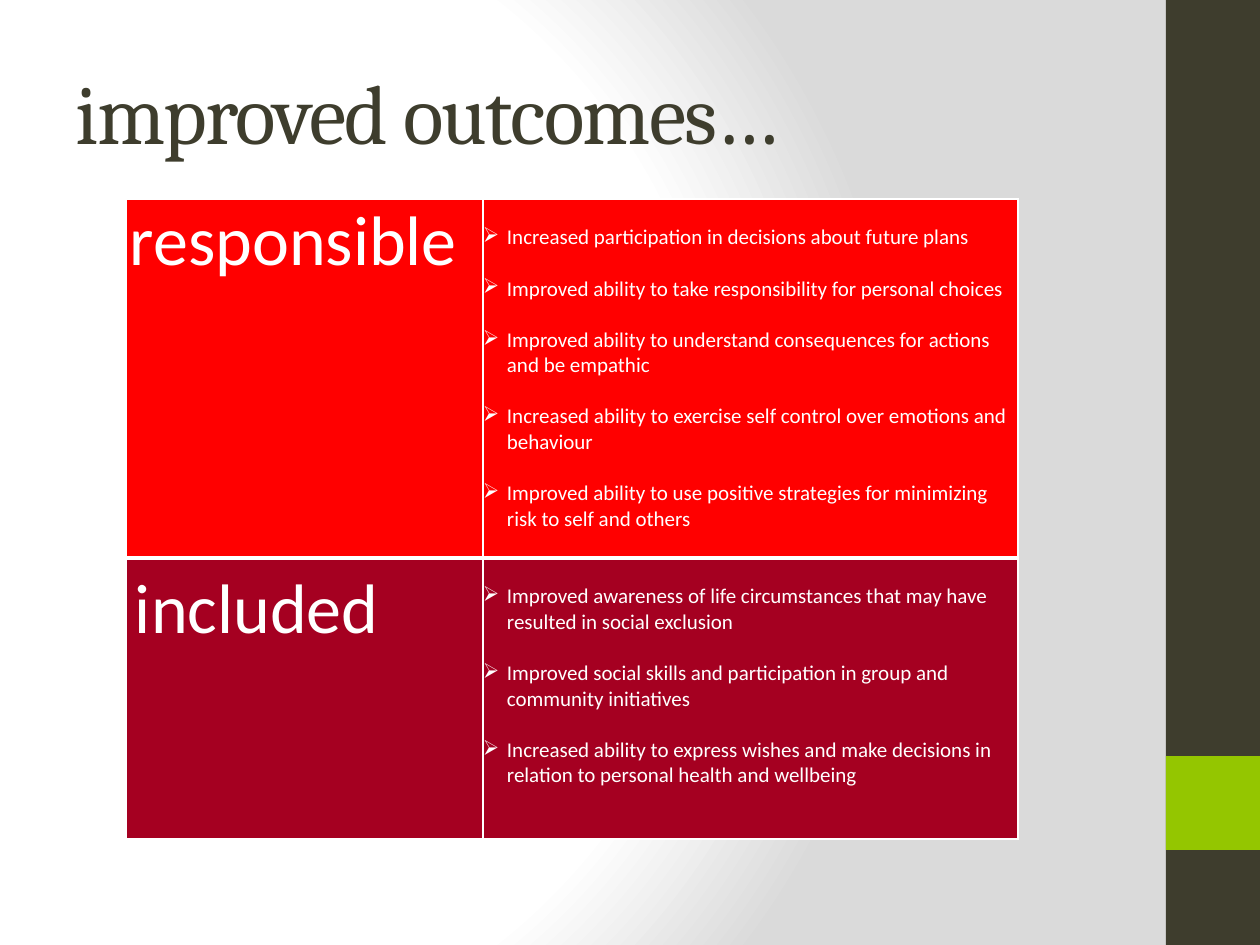
from lxml import etree
from pptx import Presentation
from pptx.dml.color import RGBColor
from pptx.enum.shapes import MSO_SHAPE
from pptx.enum.text import MSO_ANCHOR, PP_ALIGN
from pptx.oxml import parse_xml
from pptx.oxml.ns import nsdecls, qn
from pptx.util import Emu, Pt

RECTANGLE = MSO_SHAPE.RECTANGLE
MIDDLE = MSO_ANCHOR.MIDDLE
LEFT = PP_ALIGN.LEFT
PX_PER_INCH = 126

COLORS = {
    "white": "FFFFFF",
    "grey": "DADADA",
    "olive": "3E3D2D",
    "green": "94C600",
    "red": "FF0000",
    "crimson": "A50021",
}

OUTCOMES = [
    {
        "name": "responsible", "color": "red", "height": 359,
        "name_left": 4, "name_top": 0, "name_line": None,
        "points": [
            "Increased participation in decisions about future plans",
            "Improved ability to take responsibility for personal choices",
            "Improved ability to understand consequences for actions and be empathic",
            "Increased ability to exercise self control over emotions and behaviour",
            "Improved ability to use positive strategies for minimizing risk to self and others",
        ],
    },
    {
        "name": "included", "color": "crimson", "height": 281,
        "name_left": 9, "name_top": 63, "name_line": 18.1,
        "points": [
            "Improved awareness of life circumstances that may have resulted in social exclusion",
            "Improved social skills and participation in group and community initiatives",
            "Increased ability to express wishes and make decisions in relation to "
            "personal health and wellbeing",
        ],
    },
]


def px(length):
    return Emu(round(length * 914400 / PX_PER_INCH))


def rgb(name):
    return RGBColor.from_string(COLORS[name])


def paint_background(slide):
    """Circular gradient, white at the left and grey at the right."""
    slide.background.fill.solid()
    bg_pr = slide.background._cSld.bg.bgPr
    stops = "".join(
        f'<a:gs pos="{percent * 1000}"><a:srgbClr val="{COLORS[color]}"/></a:gs>'
        for percent, color in [(0, "white"), (75, "white"), (100, "grey")]
    )
    gradient = parse_xml(
        f'<a:gradFill {nsdecls("a")} rotWithShape="1"><a:gsLst>{stops}</a:gsLst>'
        '<a:path path="circle"><a:fillToRect l="20000" t="50000" r="100000" b="50000"/>'
        "</a:path></a:gradFill>"
    )
    bg_pr.replace(bg_pr.find(qn("a:solidFill")), gradient)


def add_sidebar(slide, left, top, width, height):
    accent_top = top + height * 4 // 5
    for band_top, band_height, color in [(top, height, "olive"), (accent_top, width, "green")]:
        band = slide.shapes.add_shape(
            RECTANGLE, px(left), px(band_top), px(width), px(band_height))
        band.shadow.inherit = False
        band.fill.solid()
        band.fill.fore_color.rgb = rgb(color)
        band.line.fill.background()


def place_title(slide, left, top, width, height):
    title = slide.shapes.title
    title.left, title.top, title.width, title.height = map(px, (left, top, width, height))
    frame = title.text_frame
    frame.text = "improved outcomes…"
    frame.vertical_anchor = MIDDLE
    paragraph = frame.paragraphs[0]
    paragraph.alignment = LEFT
    run = paragraph.runs[0]
    run.font.name = "Cambria"
    run.font.size = Pt(48)
    run.font.color.rgb = rgb("olive")
    run.font._element.set("spc", "-100")


def set_borders(cell, top_width, bottom_width):
    properties = cell._tc.get_or_add_tcPr()
    for side, width in [("L", 1), ("R", 1), ("T", top_width), ("B", bottom_width)]:
        line = etree.SubElement(properties, qn(f"a:ln{side}"), w=str(Pt(width)))
        fill = etree.SubElement(line, qn("a:solidFill"))
        etree.SubElement(fill, qn("a:srgbClr"), val=COLORS["white"])


def format_cell(cell, color, left, top):
    cell.margin_left, cell.margin_top = px(left), px(top)
    cell.margin_right = cell.margin_bottom = 0
    cell.fill.solid()
    cell.fill.fore_color.rgb = rgb(color)


def format_text(paragraph, size):
    for run in paragraph.runs:
        run.font.name = "Calibri"
        run.font.size = Pt(size)
        run.font.bold = False
        run.font.color.rgb = rgb("white")


def fill_name(cell, outcome):
    format_cell(cell, outcome["color"], outcome["name_left"], outcome["name_top"])
    cell.text_frame.text = outcome["name"]
    paragraph = cell.text_frame.paragraphs[0]
    if outcome["name_line"]:
        paragraph.line_spacing = Pt(outcome["name_line"])
    format_text(paragraph, 40)


def fill_points(cell, outcome):
    format_cell(cell, outcome["color"], 0, 26)
    frame = cell.text_frame
    frame.text = "\n".join(outcome["points"])
    for index, paragraph in enumerate(frame.paragraphs):
        properties = paragraph._p.get_or_add_pPr()
        properties.set("marL", str(px(24)))
        properties.set("indent", str(-px(24)))
        etree.SubElement(properties, qn("a:buChar"), char="➢")
        if index:
            paragraph.space_before = Pt(14.6)
        format_text(paragraph, 12)


def add_outcomes_table(slide, left, top, column_widths):
    height = sum(outcome["height"] for outcome in OUTCOMES)
    table = slide.shapes.add_table(
        len(OUTCOMES), len(column_widths),
        px(left), px(top), px(sum(column_widths)), px(height)).table
    table.first_row = table.horz_banding = False
    for column, width in zip(table.columns, column_widths):
        column.width = px(width)
    last = len(OUTCOMES) - 1
    for index, (row, outcome) in enumerate(zip(table.rows, OUTCOMES)):
        row.height = px(outcome["height"])
        name_cell, points_cell = row.cells
        for cell in (name_cell, points_cell):
            set_borders(cell, 3 if index else 1, 3 if index < last else 1)
        fill_name(name_cell, outcome)
        fill_points(points_cell, outcome)


def main():
    deck = Presentation()
    deck.slide_width, deck.slide_height = px(1260), px(945)
    slide = deck.slides.add_slide(deck.slide_layouts[5])
    paint_background(slide)
    add_sidebar(slide, 1166, 0, 94, 945)
    place_title(slide, 63, 32, 1050, 157)
    add_outcomes_table(slide, 126, 199, [357, 535])
    deck.save("out.pptx")


if __name__ == "__main__":
    main()
